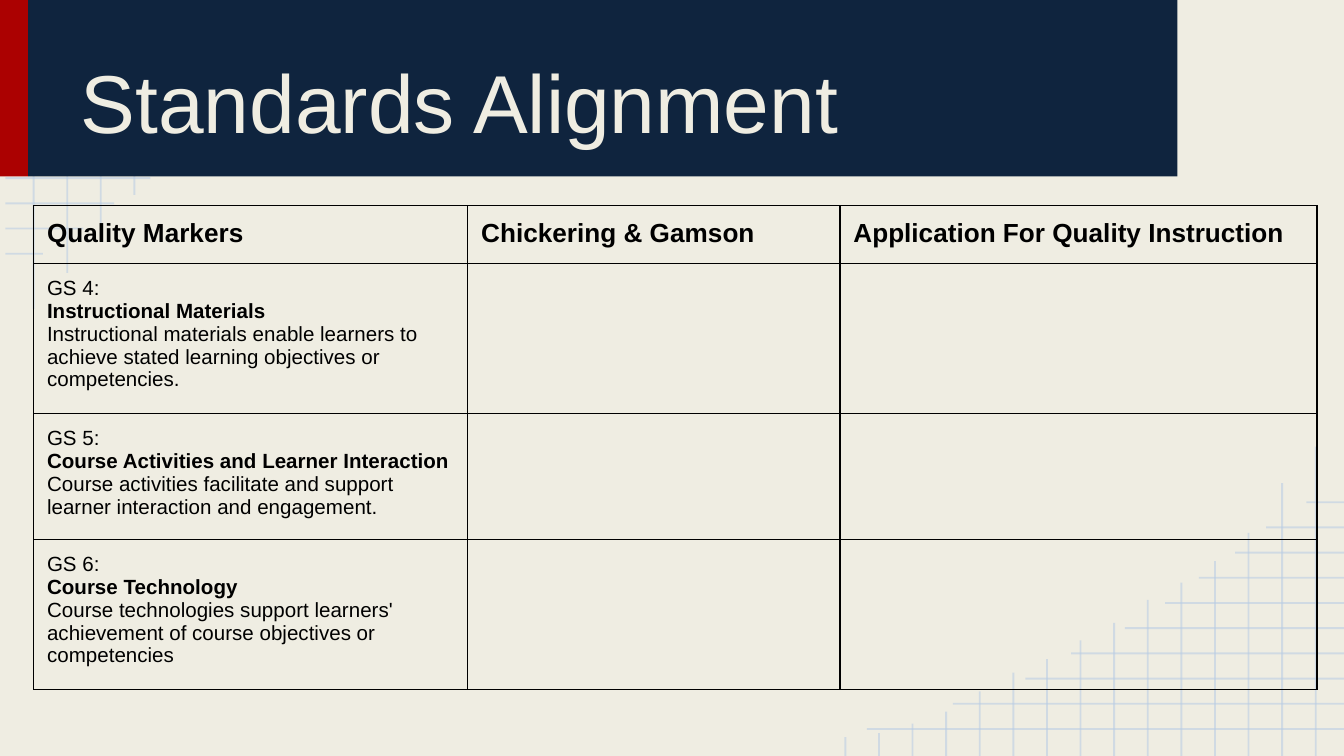
import pptx
import pptx.dml.color
import pptx.enum.shapes
import pptx.enum.text
import pptx.oxml
import pptx.oxml.ns
import pptx.util

COLS, ROWS = 40, 30
WIDTH, HEIGHT = pptx.util.Inches(10), pptx.util.Inches(5.625)
SAND, NAVY, RED, BLUE, BLACK = "EFEDE2", "0F243E", "AB0101", "B7CCE4", "000000"

# Ends of the mesh lines, in columns for the level ones, rows for the upright ones
LEVEL = [14.36, 11.8, 9.64, 8.28, 6.68, 5.48, 4.48, 3.4, 2.48, 1.28]
UPRIGHT = [12.27, 10.83, 8.85, 7.73, 6.88, 6.19, 5.28, 4.59,
           3.84, 3.31, 2.56, 1.76, 1.28, 0.91, 0.75]

HEADS = ["Quality Markers", "Chickering & Gamson", "Application For Quality Instruction"]
GOALS = [
    ("GS 4:", "Instructional Materials",
     "Instructional materials enable learners to achieve stated learning "
     "objectives or competencies."),
    ("GS 5:", "Course Activities and Learner Interaction",
     "Course activities facilitate and support learner interaction and engagement."),
    ("GS 6:", "Course Technology",
     "Course technologies support learners' achievement of course objectives "
     "or competencies"),
]


def tint(code):
    return pptx.dml.color.RGBColor.from_string(code)


def wide(cols):
    return round(WIDTH * cols / COLS)


def high(rows):
    return round(HEIGHT * rows / ROWS)


def node(xml):
    space = pptx.oxml.ns.nsdecls("a")
    return pptx.oxml.parse_xml(xml.replace(">", f" {space}>", 1))


class Page:
    """Holds the slide and its style; places are in columns and rows."""

    font = "Arial"
    inset = pptx.util.Inches(0.1)

    def __init__(self, slide):
        self.slide = slide
        self.shapes = slide.shapes
        slide.background.fill.solid()
        slide.background.fill.fore_color.rgb = tint(SAND)

    def pad(self, box):
        box.margin_left = box.margin_right = self.inset
        box.margin_top = box.margin_bottom = self.inset

    def style(self, para, size, color, bold=False):
        para.alignment = pptx.enum.text.PP_ALIGN.LEFT
        for run in para.runs:
            run.font.name = self.font
            run.font.size = pptx.util.Pt(size)
            run.font.bold = bold
            run.font.color.rgb = tint(color)

    def line(self, x1, y1, x2, y2):
        line = self.shapes.add_connector(
            pptx.enum.shapes.MSO_CONNECTOR.STRAIGHT,
            wide(x1), high(y1), wide(x2), high(y2))
        line.line.width = pptx.util.Pt(1)
        line.line.color.rgb = tint(BLUE)
        color = line.element.find(".//" + pptx.oxml.ns.qn("a:srgbClr"))
        color.append(node('<a:alpha val="54000"/>'.replace("/>", "></a:alpha>")))
        line.element.spPr.append(node("<a:effectLst></a:effectLst>"))

    def mesh(self, turn=False):
        """Draw the corner mesh top left, or turned half round, bottom right."""
        lines = [(0.16, k + 0.07, end, k + 0.07) for k, end in enumerate(LEVEL, 1)]
        lines += [(k, end, k, 0) for k, end in enumerate(UPRIGHT, 1)]
        for x1, y1, x2, y2 in lines:
            if turn:
                x1, x2 = COLS + 0.16 - x1, COLS + 0.16 - x2
                y1, y2 = ROWS - y1, ROWS - y2
            self.line(x1, y1, x2, y2)

    def block(self, x, y, w, h, color):
        block = self.shapes.add_shape(
            pptx.enum.shapes.MSO_SHAPE.RECTANGLE, wide(x), high(y), wide(w), high(h))
        block.shadow.inherit = False
        block.fill.solid()
        block.fill.fore_color.rgb = tint(color)
        block.line.fill.background()

    def title(self, x, y, w, h, text):
        title = self.shapes.title
        title.left, title.top = wide(x), high(y)
        title.width, title.height = wide(w), high(h)
        frame = title.text_frame
        frame.text = text
        frame.word_wrap = True
        frame.vertical_anchor = pptx.enum.text.MSO_ANCHOR.BOTTOM
        self.pad(frame)
        self.style(frame.paragraphs[0], 44, SAND)
        self.shapes.element.append(title.element)  # in front of the banner

    def border(self, cell):
        props = cell._tc.get_or_add_tcPr()
        for spot, side in enumerate("LRTB"):
            props.insert(spot, node(
                f'<a:ln{side} w="9525"><a:solidFill><a:srgbClr val="{BLACK}"/>'
                f"</a:solidFill></a:ln{side}>"))

    def table(self, x, y, widths, heights, heads, goals):
        table = self.shapes.add_table(
            len(heights), len(widths), wide(x), high(y),
            wide(sum(widths)), high(sum(heights))).table
        table.first_row = table.horz_banding = False
        for col, w in zip(table.columns, widths):
            col.width = wide(w)
        for row, h in zip(table.rows, heights):
            row.height = high(h)
        for cell in table.iter_cells():
            cell.fill.background()
            self.pad(cell)
            self.border(cell)
        for col, head in enumerate(heads):
            cell = table.cell(0, col)
            cell.text = head
            self.style(cell.text_frame.paragraphs[0], 14, BLACK, True)
        for row, goal in enumerate(goals, 1):
            cell = table.cell(row, 0)
            cell.text = "\n".join(goal)
            for spot, para in enumerate(cell.text_frame.paragraphs):
                self.style(para, 11, BLACK, spot == 1)


def main():
    deck = pptx.Presentation()
    deck.slide_width, deck.slide_height = WIDTH, HEIGHT
    page = Page(deck.slides.add_slide(deck.slide_layouts[5]))
    page.mesh()
    page.mesh(turn=True)
    page.block(0, -0.05, 0.84, 7.05, RED)
    page.block(0.84, -0.05, 34.2, 7.05, NAVY)
    page.title(2, 0.6, 32, 5.9, "Standards Alignment")
    page.table(1, 8.16, [12.92, 11.08, 14.2], [2.3, 5.95, 5, 5.95], HEADS, GOALS)
    deck.save("out.pptx")


if __name__ == "__main__":
    main()
